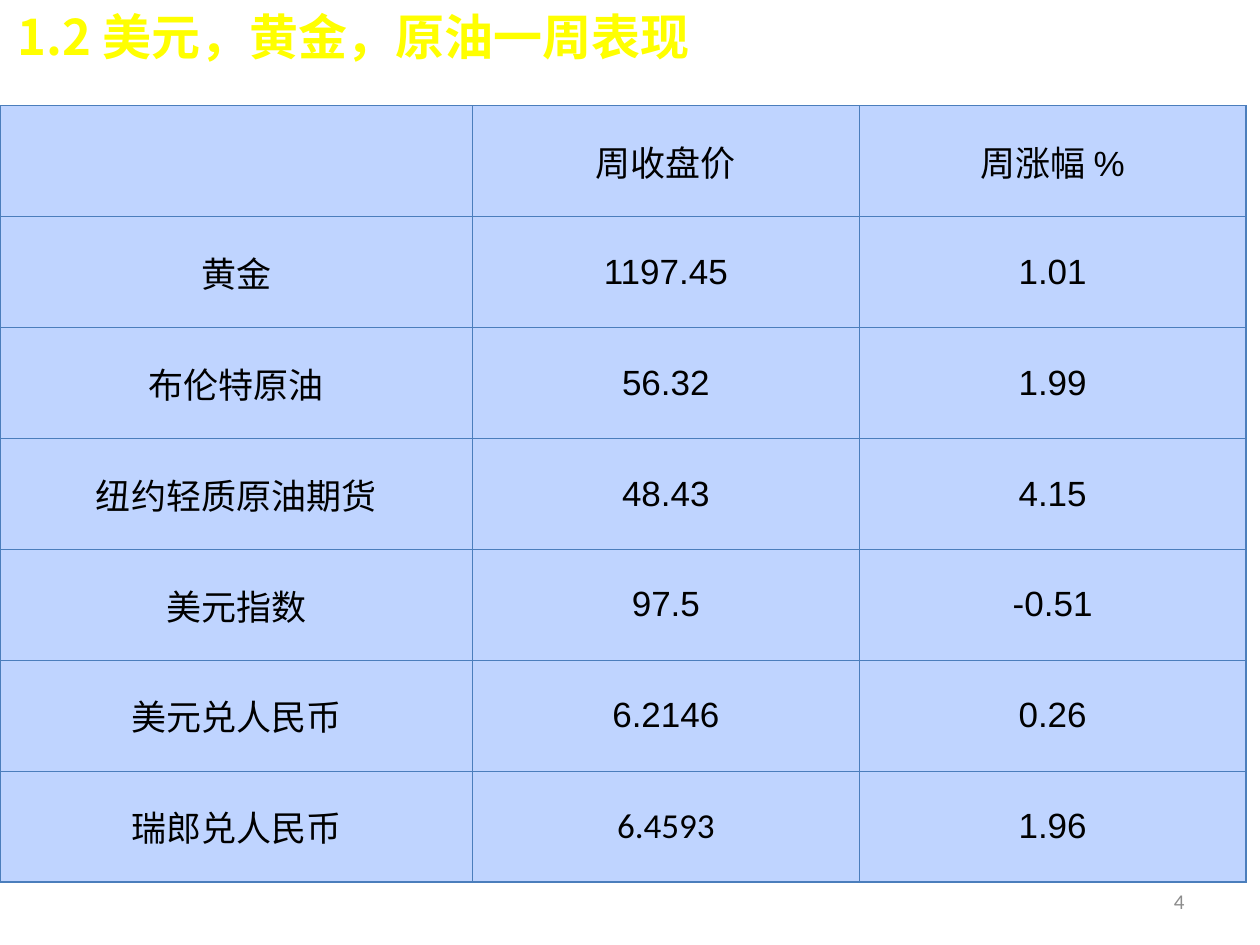
from dataclasses import dataclass

from lxml import etree
from pptx import Presentation
from pptx.dml.color import RGBColor
from pptx.enum.text import MSO_ANCHOR, MSO_AUTO_SIZE, PP_ALIGN
from pptx.oxml.ns import qn
from pptx.util import Inches, Pt

CENTER, LEFT, RIGHT = PP_ALIGN.CENTER, PP_ALIGN.LEFT, PP_ALIGN.RIGHT
TOP, MIDDLE = MSO_ANCHOR.TOP, MSO_ANCHOR.MIDDLE
GROW = MSO_AUTO_SIZE.SHAPE_TO_FIT_TEXT
TITLE_ONLY = 5


@dataclass(frozen=True)
class Theme:
    title_color: str = "FFFF00"
    text_color: str = "000000"
    number_color: str = "8C8C8C"
    cell_fill: str = "BFD4FF"
    border_color: str = "4B7EBC"
    border_width: float = 0.75
    title_font: str = "Noto Sans CJK SC"
    body_font: str = "Arial"
    alternate_font: str = "Calibri"
    title_size: int = 28
    body_size: int = 20
    number_size: int = 12


THEME = Theme()
COLUMN_WIDTHS = (3.75, 3.07, 3.07)
ROW_HEIGHT = 0.88
ROWS = (
    ("", "周收盘价", "周涨幅 %"),
    ("黄金", "1197.45", "1.01"),
    ("布伦特原油", "56.32", "1.99"),
    ("纽约轻质原油期货", "48.43", "4.15"),
    ("美元指数", "97.5", "-0.51"),
    ("美元兑人民币", "6.2146", "0.26"),
    ("瑞郎兑人民币", "6.4593", "1.96"),
)
ALTERNATE_FONT_CELLS = {(6, 0), (6, 1)}


def format_paragraph(para, font_name, size, color, align, bold=False):
    para.alignment = align
    font = para.font
    font.name, font.size, font.bold = font_name, Pt(size), bold
    font.color.rgb = RGBColor.from_string(color)


def add_title(page, text):
    title = page.shapes.title
    title.left, title.top = Inches(0.04), Inches(0)
    title.width, title.height = Inches(9.45), Inches(0.57)
    frame = title.text_frame
    frame.text = text
    frame.word_wrap = True
    frame.auto_size = GROW
    frame.vertical_anchor = TOP
    para = frame.paragraphs[0]
    format_paragraph(para, THEME.title_font, THEME.title_size,
                     THEME.title_color, LEFT, bold=True)
    east_asian = etree.SubElement(para.runs[0].font._element, qn("a:ea"))
    east_asian.set("typeface", THEME.title_font)


def set_borders(cell):
    """Draw all four edges; the lines must precede the fill in the XML."""
    properties = cell._tc.get_or_add_tcPr()
    for index, side in enumerate(("lnL", "lnR", "lnT", "lnB")):
        line = etree.Element(qn(f"a:{side}"), w=str(Pt(THEME.border_width)))
        fill = etree.SubElement(line, qn("a:solidFill"))
        etree.SubElement(fill, qn("a:srgbClr"), val=THEME.border_color)
        properties.insert(index, line)


def format_cell(cell, text, font_name):
    cell.fill.solid()
    cell.fill.fore_color.rgb = RGBColor.from_string(THEME.cell_fill)
    set_borders(cell)
    cell.margin_left = cell.margin_right = Inches(0)
    cell.margin_top = cell.margin_bottom = Inches(0)
    cell.vertical_anchor = MIDDLE
    cell.text = text
    format_paragraph(cell.text_frame.paragraphs[0], font_name,
                     THEME.body_size, THEME.text_color, CENTER)


def add_price_table(page):
    table = page.shapes.add_table(
        len(ROWS), len(COLUMN_WIDTHS), Inches(0), Inches(0.84),
        Inches(sum(COLUMN_WIDTHS)), Inches(ROW_HEIGHT * len(ROWS))).table
    table.first_row = table.horz_banding = False
    for column, width in zip(table.columns, COLUMN_WIDTHS):
        column.width = Inches(width)
    for row_index, row in enumerate(ROWS):
        table.rows[row_index].height = Inches(ROW_HEIGHT)
        for column_index, text in enumerate(row):
            alternate = (row_index, column_index) in ALTERNATE_FONT_CELLS
            font_name = THEME.alternate_font if alternate else THEME.body_font
            format_cell(table.cell(row_index, column_index), text, font_name)


def add_page_number(page, number):
    box = page.shapes.add_textbox(Inches(7.17), Inches(6.95),
                                  Inches(2.33), Inches(0.4))
    frame = box.text_frame
    frame.word_wrap = True
    frame.vertical_anchor = MIDDLE
    frame.text = number
    format_paragraph(frame.paragraphs[0], THEME.alternate_font,
                     THEME.number_size, THEME.number_color, RIGHT)


def main():
    deck = Presentation()
    deck.slide_width, deck.slide_height = Inches(10), Inches(7.5)
    page = deck.slides.add_slide(deck.slide_layouts[TITLE_ONLY])
    add_title(page, "1.2 美元，黄金，原油一周表现")
    add_price_table(page)
    add_page_number(page, "4")
    deck.save("out.pptx")


if __name__ == "__main__":
    main()
